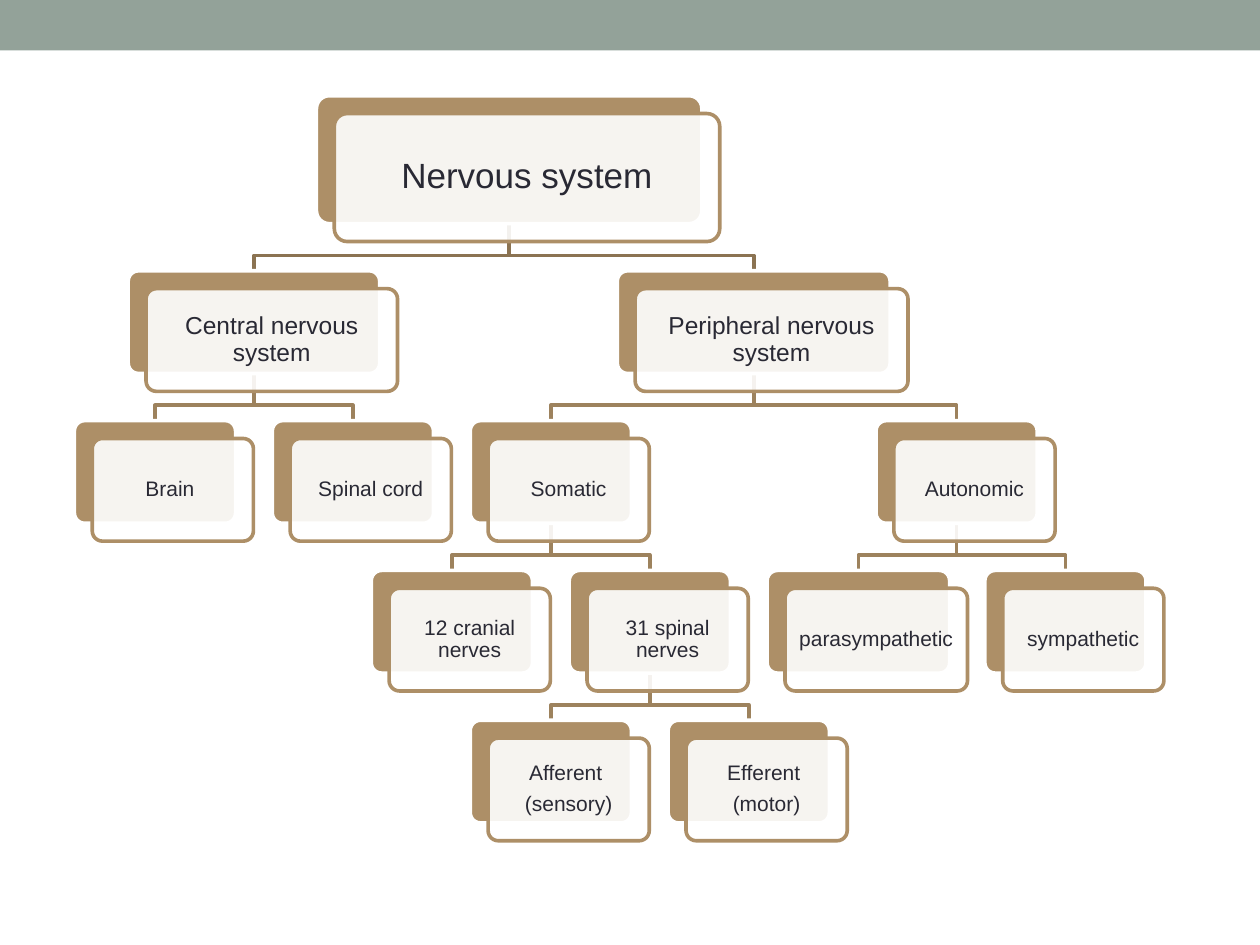
from dataclasses import dataclass, field
from lxml import etree
from pptx import Presentation
from pptx import util as u
from pptx.dml.color import RGBColor
from pptx.enum import shapes, text
from pptx.oxml import ns

HUES = {"band": "93A299", "tan": "AD8F67", "white": "FFFFFF", "ink": "292934",
        "root": "8B7352", "link": "9D825D"}
LEFT, TOP, STEP, GAP, SHIFT = 1.5, 1.93, 3.99, 0.95, 0.36
TALL, HIGH, DROP = 2.58, 2.07, 0.64
FRAME = {"word_wrap": True, "vertical_anchor": text.MSO_ANCHOR.MIDDLE}
PARA = {"alignment": text.PP_ALIGN.CENTER, "line_spacing": 0.9}
FONT = {"name": "Arial"}


@dataclass
class Node:
    """One box of the tree; a leaf has a column, a parent has kids."""
    label: str
    col: float = 0
    wide: float = 3.25
    size: int = 12
    kids: list = field(default_factory=list)
    box: tuple = ()


TREE = Node("Nervous system", wide=7.77, size=20, kids=[
    Node("Central nervous system", wide=5.07, size=14, kids=[
        Node("Brain ", 0), Node("Spinal cord", 1)]),
    Node("Peripheral nervous system", wide=5.5, size=14, kids=[
        Node("Somatic", kids=[
            Node("12 cranial nerves", 1.5),
            Node("31 spinal nerves", kids=[
                Node("Afferent \n(sensory)", 2), Node("Efferent \n(motor)", 3)])]),
        Node("Autonomic", kids=[
            Node("parasympathetic", 3.5, 3.68), Node("sympathetic", 4.6)])])])


def apply(item, values):
    """Set every attribute in values on item."""
    for name, value in values.items():
        setattr(item, name, value)


def place(node, top=TOP, high=TALL):
    """Fix the box of each node, centring parents over their kids."""
    for kid in node.kids:
        place(kid, top + high + GAP, HIGH)
    left = LEFT + node.col * STEP
    if node.kids:
        first, last = node.kids[0].box, node.kids[-1].box
        left = (first[0] + last[0] + last[2] - node.wide) / 2
    node.box = (left, top, node.wide, high)


def panel(slide, kind, box, fill, line=None):
    """Add a filled shape in the given box."""
    shape = slide.shapes.add_shape(kind, *map(u.Cm, box))
    shape.shadow.inherit = False
    shape.fill.solid()
    shape.fill.fore_color.rgb = RGBColor.from_string(HUES[fill])
    if line:
        shape.adjustments[0] = 0.1
        shape.line.color.rgb = RGBColor.from_string(HUES[line])
        shape.line.width = u.Pt(2.08)
    else:
        shape.line.fill.background()
    return shape


def link(slide, upper, lower, hue):
    """Draw an elbow from the foot of one box to the head of another."""
    start, end = upper[0] + upper[2] / 2, lower[0] + lower[2] / 2
    foot = upper[1] + upper[3]
    bend = foot + DROP
    points = [(start, foot), (start, bend), (end, bend), (end, lower[1])]
    points = [(u.Cm(x), u.Cm(y)) for x, y in points]
    build = slide.shapes.build_freeform(*points[0])
    build.add_line_segments(points[1:], close=False)
    shape = build.convert_to_shape()
    shape.shadow.inherit = False
    shape.fill.background()
    shape.line.color.rgb = RGBColor.from_string(HUES[hue])
    shape.line.width = u.Pt(2.08)


def links(slide, node, hue="root"):
    """Draw all elbows below a node."""
    for kid in node.kids:
        links(slide, kid, "link")
        link(slide, node.box, kid.box, hue)


def card(slide, node):
    """Draw a tan card with a pale labelled card shifted over it."""
    kind = shapes.MSO_SHAPE.ROUNDED_RECTANGLE
    left, top, wide, high = node.box
    panel(slide, kind, node.box, "tan", "white")
    front = panel(slide, kind, (left + SHIFT, top + SHIFT, wide, high), "white", "tan")
    color = front.fill._xPr.find(".//" + ns.qn("a:srgbClr"))
    etree.SubElement(color, ns.qn("a:alpha"), val="90000")
    frame = front.text_frame
    frame.text = node.label
    sides = ("left", "right", "top", "bottom")
    inset = {f"margin_{side}": u.Cm(node.size / 100) for side in sides}
    apply(frame, FRAME | inset)
    for para in frame.paragraphs:
        apply(para, PARA | {"space_after": u.Pt(node.size * 0.4)})
        for run in para.runs:
            apply(run.font, FONT | {"size": u.Pt(node.size)})
            run.font.color.rgb = RGBColor.from_string(HUES["ink"])


def cards(slide, node):
    """Draw the cards of a node and all below it."""
    card(slide, node)
    for kid in node.kids:
        cards(slide, kid)


def main():
    """Build the slide and save it."""
    deck = Presentation()
    deck.slide_width, deck.slide_height = u.Cm(25.4), u.Cm(19.05)
    slide = deck.slides.add_slide(deck.slide_layouts[6])
    panel(slide, shapes.MSO_SHAPE.RECTANGLE, (0, 0, 25.4, 1.02), "band")
    place(TREE)
    links(slide, TREE)
    cards(slide, TREE)
    deck.save("out.pptx")


if __name__ == "__main__":
    main()
